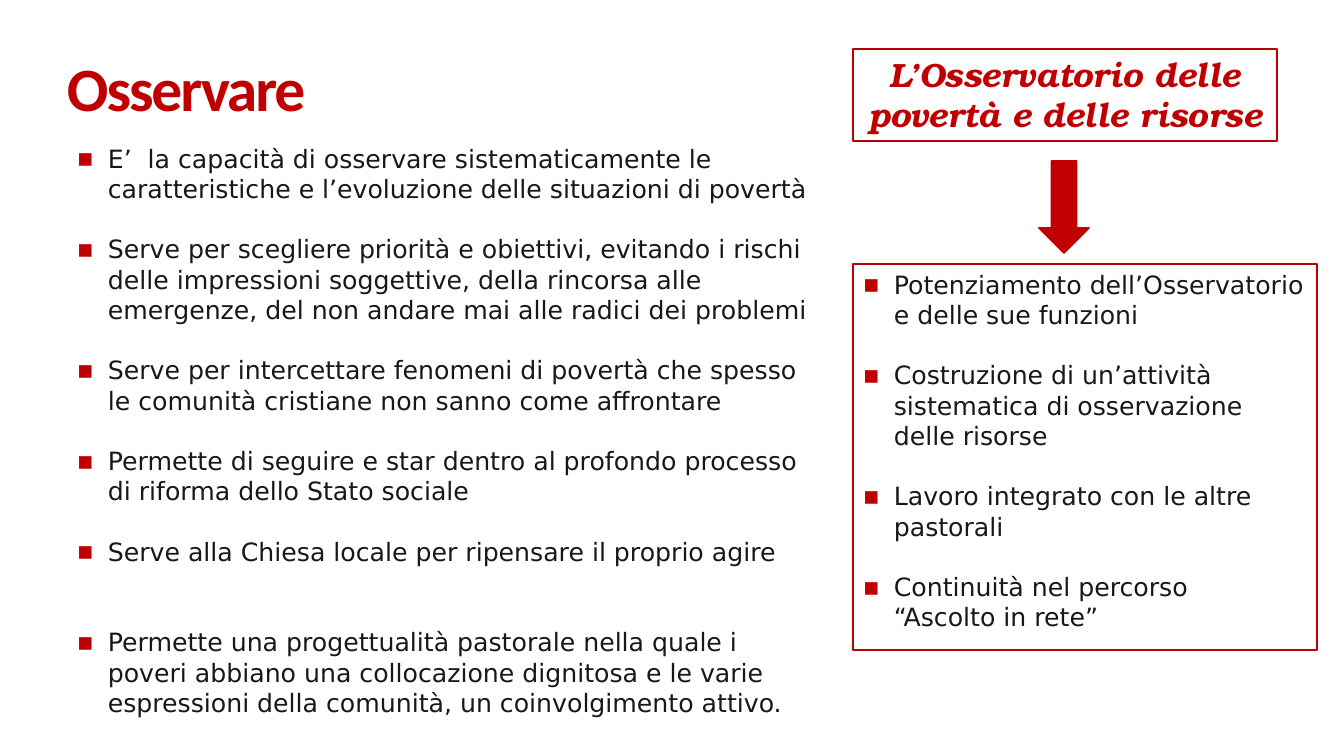
from lxml.etree import SubElement as Sub
from pptx import Presentation
from pptx.dml.color import RGBColor as RGB
from pptx.enum.shapes import MSO_SHAPE as Shape
from pptx.enum.text import MSO_ANCHOR as Anchor, PP_ALIGN as Align
from pptx.oxml.ns import qn
from pptx.util import Pt

# Content
TITLE = "Osservare"
HEAD = "L’Osservatorio delle povertà e delle risorse"
# Each point: text, blank lines above it
POINTS = [
    ("E’  la capacità di osservare sistematicamente le caratteristiche e "
     "l’evoluzione delle situazioni di povertà", 0),
    ("Serve per scegliere priorità e obiettivi, evitando i rischi delle "
     "impressioni soggettive, della rincorsa alle emergenze, del non andare "
     "mai alle radici dei problemi", 1),
    ("Serve per intercettare fenomeni di povertà che spesso le comunità "
     "cristiane non sanno come affrontare", 1),
    ("Permette di seguire e star dentro al profondo processo di riforma "
     "dello Stato sociale", 1),
    ("Serve alla Chiesa locale per ripensare il proprio agire", 1),
    ("Permette una progettualità pastorale nella quale i poveri abbiano una "
     "collocazione dignitosa e le varie espressioni della comunità, un "
     "coinvolgimento attivo.", 2),
]
GOALS = [
    ("Potenziamento dell’Osservatorio e delle sue funzioni", 0),
    ("Costruzione di un’attività sistematica di osservazione delle risorse", 1),
    ("Lavoro integrato con le altre pastorali", 1),
    ("Continuità nel percorso\v“Ascolto in rete”", 1),
]

# Style and layout, lengths in px
RED, EDGE, INK, WHITE = "C00000", "B70000", "181818", "FFFFFF"
SCALE = 914400 / 100.8
WIDE, HIGH = 1344, 756
LEFT, RIGHT = 67, 853
INDENT = 31
LINE = Pt(21.6)


def px(n):
    return round(n * SCALE)


def color(code):
    return RGB.from_string(code)


def style(para, name, size, code, bold=False, slant=False):
    for run in para.runs:
        font = run.font
        font.name, font.size = name, Pt(size)
        font.bold, font.italic = bold, slant
        font.color.rgb = color(code)


def bullet(para):
    props = para._p.get_or_add_pPr()
    props.set("marL", str(px(INDENT)))
    props.set("indent", str(-px(INDENT)))
    tint = Sub(props, qn("a:buClr"))
    Sub(tint, qn("a:srgbClr"), val=RED)
    Sub(props, qn("a:buFont"), typeface="DejaVu Sans")
    Sub(props, qn("a:buChar"), char="▪")


def fill_list(frame, items):
    frame.word_wrap = True
    for i, (text, gap) in enumerate(items):
        para = frame.add_paragraph() if i else frame.paragraphs[0]
        para.text = text
        para.alignment = Align.LEFT
        para.line_spacing = LINE
        para.space_before = LINE * gap
        bullet(para)
        style(para, "DejaVu Sans", 18, INK)


def add_box(kind, rect, fill, edge):
    box = slide.shapes.add_shape(kind, *map(px, rect))
    box.shadow.inherit = False
    box.fill.solid()
    box.fill.fore_color.rgb = color(fill)
    box.line.color.rgb = color(edge)
    box.line.width = Pt(1.25)
    box.text_frame.vertical_anchor = Anchor.TOP
    return box


deck = Presentation()
deck.slide_width, deck.slide_height = px(WIDE), px(HIGH)
slide = deck.slides.add_slide(deck.slide_layouts[5])

# Title
title = slide.shapes.title
title.left, title.top, title.width, title.height = map(px, (LEFT, 30, 1210, 126))
frame = title.text_frame
frame.text = TITLE
frame.vertical_anchor = Anchor.MIDDLE
frame.margin_left = frame.margin_right = 0
frame.margin_top = frame.margin_bottom = 0
para = frame.paragraphs[0]
para.alignment = Align.LEFT
para.line_spacing = 0.85
style(para, "Calibri", 44, RED, bold=True)
para.runs[0].font._element.set("spc", "-150")

# Goals panel
panel = add_box(Shape.RECTANGLE, (RIGHT, 264, 464, 386), WHITE, EDGE)
fill_list(panel.text_frame, GOALS)

# Main list
body = slide.shapes.add_textbox(*map(px, (LEFT, 138, 758, 618)))
fill_list(body.text_frame, POINTS)

# Heading box and arrow
head = add_box(Shape.RECTANGLE, (RIGHT, 49, 424, 92), WHITE, EDGE)
head.text_frame.word_wrap = True
head.text_frame.text = HEAD
para = head.text_frame.paragraphs[0]
para.alignment = Align.CENTER
style(para, "TeX Gyre Bonum", 24, RED, bold=True, slant=True)
add_box(Shape.DOWN_ARROW, (1039, 161, 50, 92), RED, RED)

deck.save("out.pptx")
